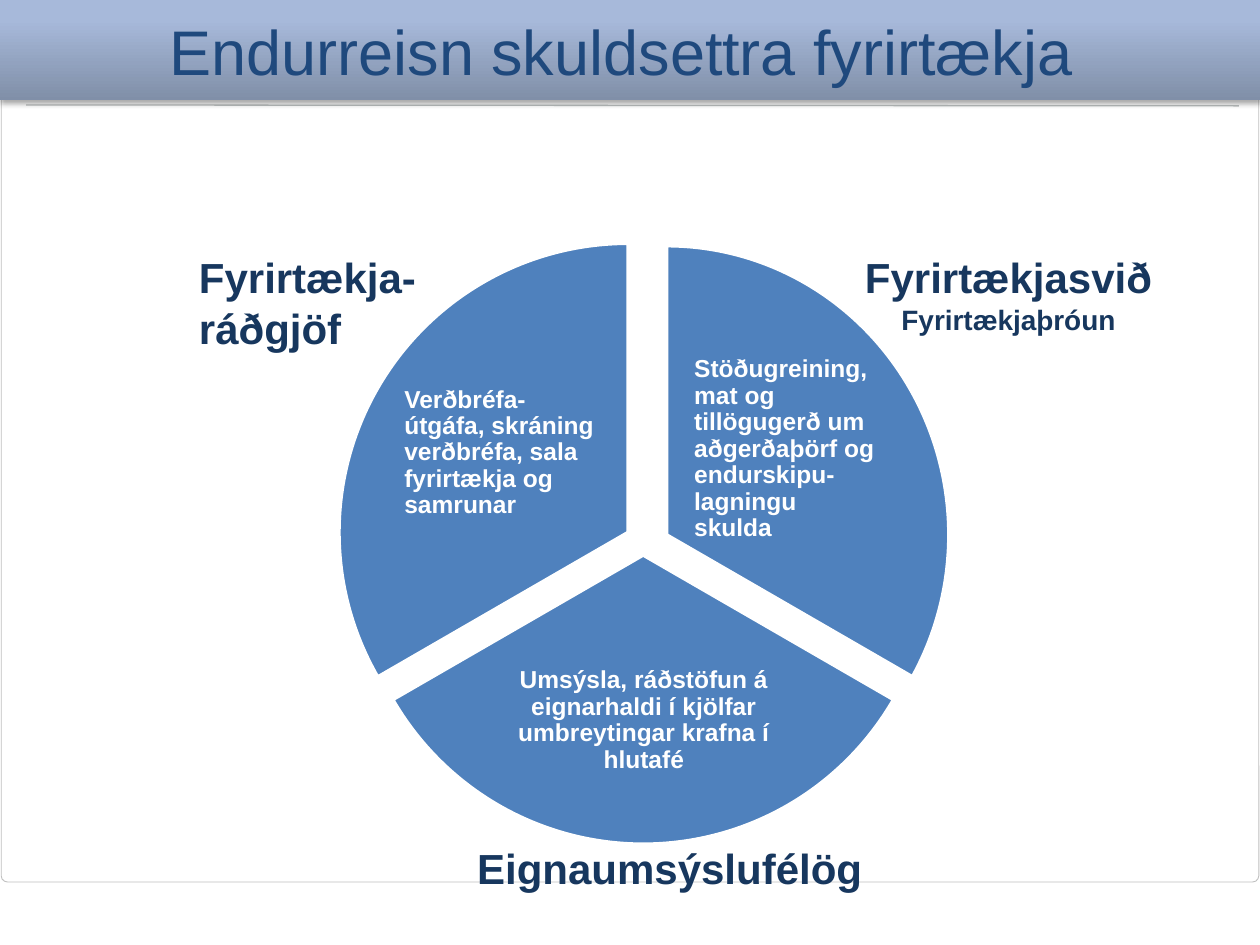
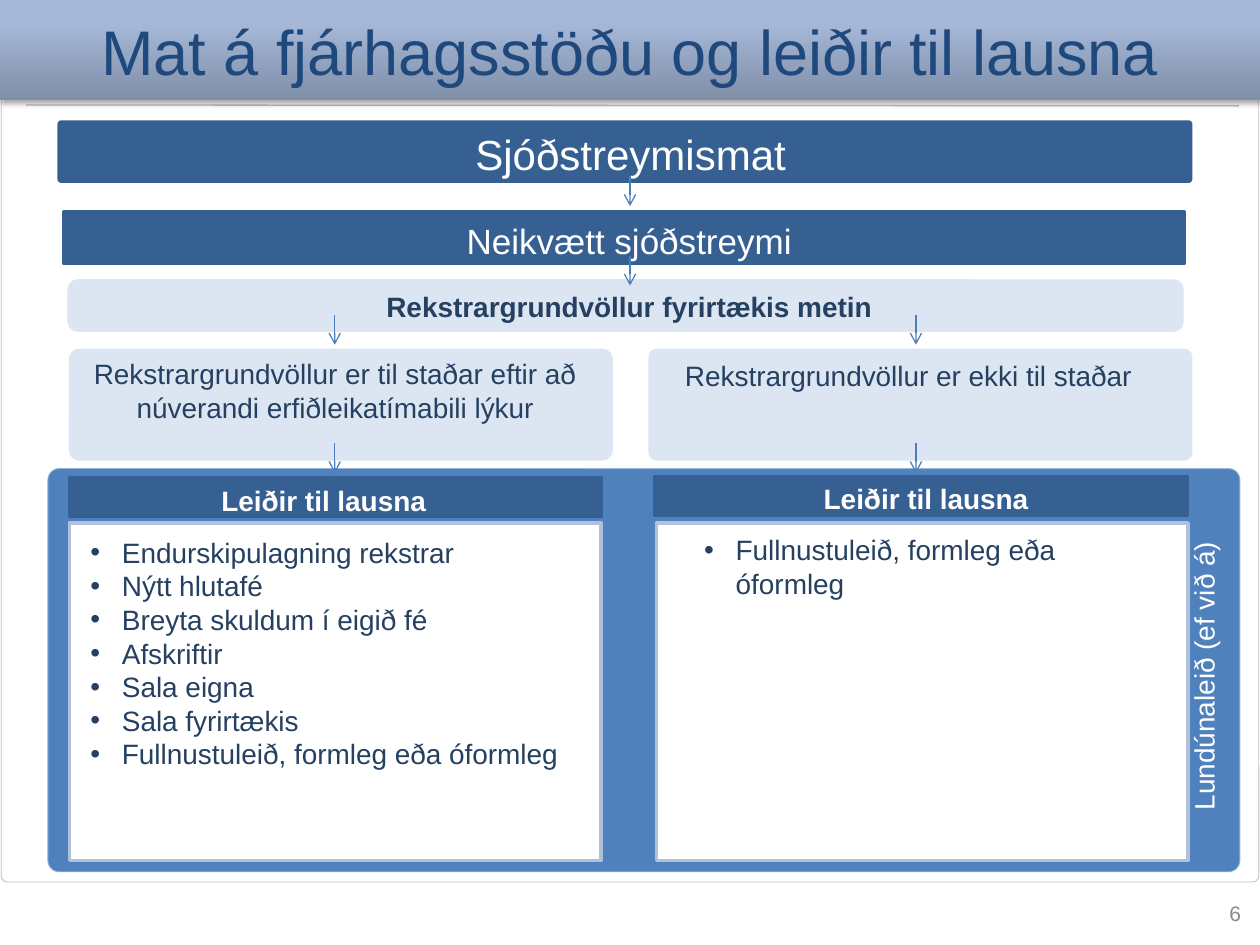
from copy import deepcopy
from dataclasses import dataclass

from lxml.etree import SubElement
from pptx import Presentation
from pptx.dml.color import RGBColor
from pptx.enum.shapes import MSO_CONNECTOR as Connector, MSO_SHAPE as Shape
from pptx.enum.text import MSO_ANCHOR as Anchor, MSO_AUTO_SIZE as AutoSize, PP_ALIGN as Align
from pptx.oxml.ns import qn
from pptx.util import Pt


@dataclass(frozen=True)
class Theme:
    font: str = "Arial"
    white: str = "FFFFFF"
    title: str = "1F497D"
    label: str = "17375E"
    body: str = "254061"
    accent: str = "4F81BD"
    accent_edge: str = "95B3D7"
    bar: str = "376092"
    pale: str = "DCE6F2"
    list_edge: str = "B2C1DB"
    arrow: str = "4B7EBC"
    rule: str = "BDC1C1"
    frame: str = "C0C0C0"
    page: str = "898989"
    band: tuple = ((0, "808FA8"), (0.8, "A7B9DA"), (1, "A6BADC"))
    title_size: int = 36
    label_size: int = 24
    bar_size: int = 20
    body_size: int = 16
    sector_size: int = 14
    page_size: int = 12


class Deck:
    def __init__(self, theme):
        self.theme = theme
        self.deck = Presentation()
        self.deck.slide_width, self.deck.slide_height = Pt(720), Pt(540)
        self.slide = None

    def start(self, heading):
        t = self.theme
        self.slide = self.deck.slides.add_slide(self.deck.slide_layouts[5])
        self.line((15, 60), (708, 60.5), t.rule)
        self.shape(Shape.ROUNDED_RECTANGLE, (0.7, 0.7, 718.6, 503.3), None, t.frame, 0.5, [0.007])
        title = self.slide.shapes.title
        self.slide.shapes._spTree.append(title._element)
        title.left, title.top, title.width, title.height = map(Pt, (0, 0, 720, 57))
        self.fill_band(title)
        self.set_text(title.text_frame, [(heading, t.title_size)], t.title, align=Align.CENTER,
                      anchor=Anchor.MIDDLE)

    def fill_band(self, title):
        title.fill.gradient()
        title.fill.gradient_angle = 90
        properties = title._element.spPr
        stops = properties.find(".//" + qn("a:gsLst"))
        stops.append(deepcopy(stops[0]))
        for stop, (position, color) in zip(title.fill.gradient_stops, self.theme.band):
            stop.position = position
            stop.color.rgb = RGBColor.from_string(color)
        effects = SubElement(properties, qn("a:effectLst"))
        shadow = SubElement(effects, qn("a:outerShdw"), blurRad=str(Pt(3.1)), dist=str(Pt(1.8)),
                            dir="5400000", rotWithShape="0")
        black = SubElement(shadow, qn("a:srgbClr"), val="000000")
        SubElement(black, qn("a:alpha"), val="35000")

    def shape(self, kind, place, fill, edge, weight=2, adjust=()):
        item = self.slide.shapes.add_shape(kind, *map(Pt, place))
        item.shadow.inherit = False
        for index, value in enumerate(adjust):
            item.adjustments[index] = value
        if fill:
            item.fill.solid()
            item.fill.fore_color.rgb = RGBColor.from_string(fill)
        else:
            item.fill.background()
        item.line.color.rgb = RGBColor.from_string(edge)
        item.line.width = Pt(weight)

    def box(self, place, fill, edge, weight=2, corner=0):
        self.shape(Shape.ROUNDED_RECTANGLE, place, fill, edge, weight, [corner])

    def line(self, start, end, color, arrow=False):
        link = self.slide.shapes.add_connector(Connector.STRAIGHT, *map(Pt, start + end))
        link.line.color.rgb = RGBColor.from_string(color)
        link.line.width = Pt(0.75)
        if arrow:
            SubElement(link.line._get_or_add_ln(), qn("a:tailEnd"), type="arrow")
        SubElement(link._element.spPr, qn("a:effectLst"))

    def drop(self, x, y):
        self.line((x, y), (x, y + 17), self.theme.arrow, arrow=True)

    def text(self, place, entries, color, vertical=False, inset=None, **style):
        frame = self.slide.shapes.add_textbox(*map(Pt, place)).text_frame
        if vertical:
            frame._txBody.bodyPr.set("vert", "vert270")
        if inset is not None:
            frame.margin_left = frame.margin_right = Pt(inset)
            frame.margin_top = frame.margin_bottom = Pt(inset)
        self.set_text(frame, entries, color, **style)

    def set_text(self, frame, entries, color, bold=False, align=Align.LEFT, anchor=Anchor.TOP,
                 spacing=None, bullets=False):
        frame.word_wrap = True
        frame.auto_size = AutoSize.NONE
        frame.vertical_anchor = anchor
        for index, (wording, size) in enumerate(entries):
            paragraph = frame.add_paragraph() if index else frame.paragraphs[0]
            paragraph.alignment = align
            if spacing:
                paragraph.line_spacing = spacing
            if bullets:
                properties = paragraph._p.get_or_add_pPr()
                properties.set("marL", str(Pt(18)))
                properties.set("indent", str(Pt(-18)))
                SubElement(properties, qn("a:buFont"), typeface=self.theme.font)
                SubElement(properties, qn("a:buChar"), char="•")
            for row, part in enumerate(wording.split("\n")):
                if row:
                    paragraph.add_line_break()
                run = paragraph.add_run()
                run.text = part
                run.font.name = self.theme.font
                run.font.size = Pt(size)
                run.font.bold = bold
                run.font.color.rgb = RGBColor.from_string(color)


def add_recovery(deck):
    t = deck.theme
    deck.start("Endurreisn skuldsettra fyrirtækja ")
    sectors = [
        ((219.6, 140.4, 322.6, 330.5), (270, 30), (395.3, 201.6, 109.4, 110.2), Align.LEFT,
         "Stöðugreining, mat og tillögugerð um aðgerðaþörf og endurskipu- lagningu skulda"),
        ((202.3, 151.9, 330.5, 330.5), (30, 150), (293, 360.7, 149.8, 102.2), Align.CENTER,
         "Umsýsla, ráðstöfun á eignarhaldi í kjölfar umbreytingar krafna í hlutafé"),
        ((193.7, 139, 330.5, 330.5), (150, 270), (229.7, 203.8, 112.3, 110.2), Align.LEFT,
         "Verðbréfa-útgáfa, skráning verðbréfa, sala fyrirtækja og samrunar"),
    ]
    for circle, angles, place, align, wording in sectors:
        deck.shape(Shape.PIE, circle, t.accent, t.white, adjust=[a * 0.6 for a in angles])
        deck.text(place, [(wording, t.sector_size)], t.white, inset=1.4, bold=True, align=align,
                  anchor=Anchor.MIDDLE, spacing=0.9)
    labels = [
        ((106.6, 140.4, 244, 65.5), Align.LEFT, [("Fyrirtækja-\nráðgjöf", t.label_size)]),
        ((478, 140.4, 196.6, 55.4), Align.CENTER,
         [("Fyrirtækjasvið", t.label_size), ("Fyrirtækjaþróun", t.body_size)]),
        ((247.7, 478, 270, 36), Align.CENTER, [("Eignaumsýslufélög", t.label_size)]),
    ]
    for place, align, entries in labels:
        deck.text(place, entries, t.label, bold=True, align=align)


def add_assessment(deck):
    t = deck.theme
    center = Align.CENTER
    deck.start("Mat á fjárhagsstöðu og leiðir til lausna")
    deck.box((27.4, 267.8, 681.1, 230.4), t.accent, t.accent_edge, 0.5, 0.028)
    deck.text((674.6, 279.4, 33.8, 213.8), [("Lundúnaleið (ef við á)", t.body_size)], t.white,
              vertical=True, align=center)

    steps = [
        ((33.8, 69.8, 646.6, 33.8), 0.037, t.bar, (39.6, 69.8, 641.5, 36),
         "Sjóðstreymismat", t.label_size, t.white, False),
        ((36.7, 121, 640, 29.5), 0, t.bar, (39.6, 121.7, 640, 31.7),
         "Neikvætt sjóðstreymi", t.bar_size, t.white, False),
        ((39.6, 160.6, 635.8, 28), 0.17, t.pale, (39.6, 162, 640, 26.6),
         "Rekstrargrundvöllur fyrirtækis metin", t.body_size, t.body, True),
    ]
    for bar, corner, fill, place, wording, size, color, bold in steps:
        deck.box(bar, fill, fill, corner=corner)
        deck.text(place, [(wording, size)], color, bold=bold, align=center)

    last_resort = "Fullnustuleið, formleg eða óformleg"
    branches = [
        (40.3, 0.08, (38.2, 200.2, 306.7, 46),
         "Rekstrargrundvöllur er til staðar eftir að núverandi erfiðleikatímabili lýkur",
         (39.6, 272.9), (39.6, 272.9), 39.6, (44.6, 302.4, 286.6, 143.3),
         ["Endurskipulagning rekstrar", "Nýtt hlutafé", "Breyta skuldum í eigið fé",
          "Afskriftir", "Sala eigna", "Sala fyrirtækis", last_resort], 191.3),
        (371.5, 0.06, (365.8, 201.6, 306.7, 26.6), "Rekstrargrundvöllur er ekki til staðar",
         (374.4, 272.2), (383.8, 271.4), 375.1, (395.3, 301, 279.4, 46), [last_resort], 523.4),
    ]
    for (card_left, corner, finding_place, finding, header, header_text, list_left, list_place,
         options, arrow_x) in branches:
        deck.box((card_left, 200.2, 308.9, 62), t.pale, t.pale, corner=corner)
        deck.text(finding_place, [(finding, t.body_size)], t.body, align=center)
        deck.box((list_left, 298.8, 303.8, 193), t.white, t.list_edge)
        deck.box((*header, 303.8, 22.3), t.bar, t.bar)
        deck.text((*header_text, 290.9, 26.6), [("Leiðir til lausna", t.body_size)], t.white,
                  bold=True, align=center)
        deck.text(list_place, [(option, t.body_size) for option in options], t.body, bullets=True)
        for y in (180, 253.4):
            deck.drop(arrow_x, y)
    for y in (100.8, 146.2):
        deck.drop(360, y)
    deck.text((691.9, 514.8, 17.3, 14.4), [("6", t.page_size)], t.page, inset=0,
              align=Align.RIGHT, anchor=Anchor.MIDDLE)


def main():
    deck = Deck(Theme())
    add_recovery(deck)
    add_assessment(deck)
    deck.deck.save("out.pptx")


if __name__ == "__main__":
    main()
